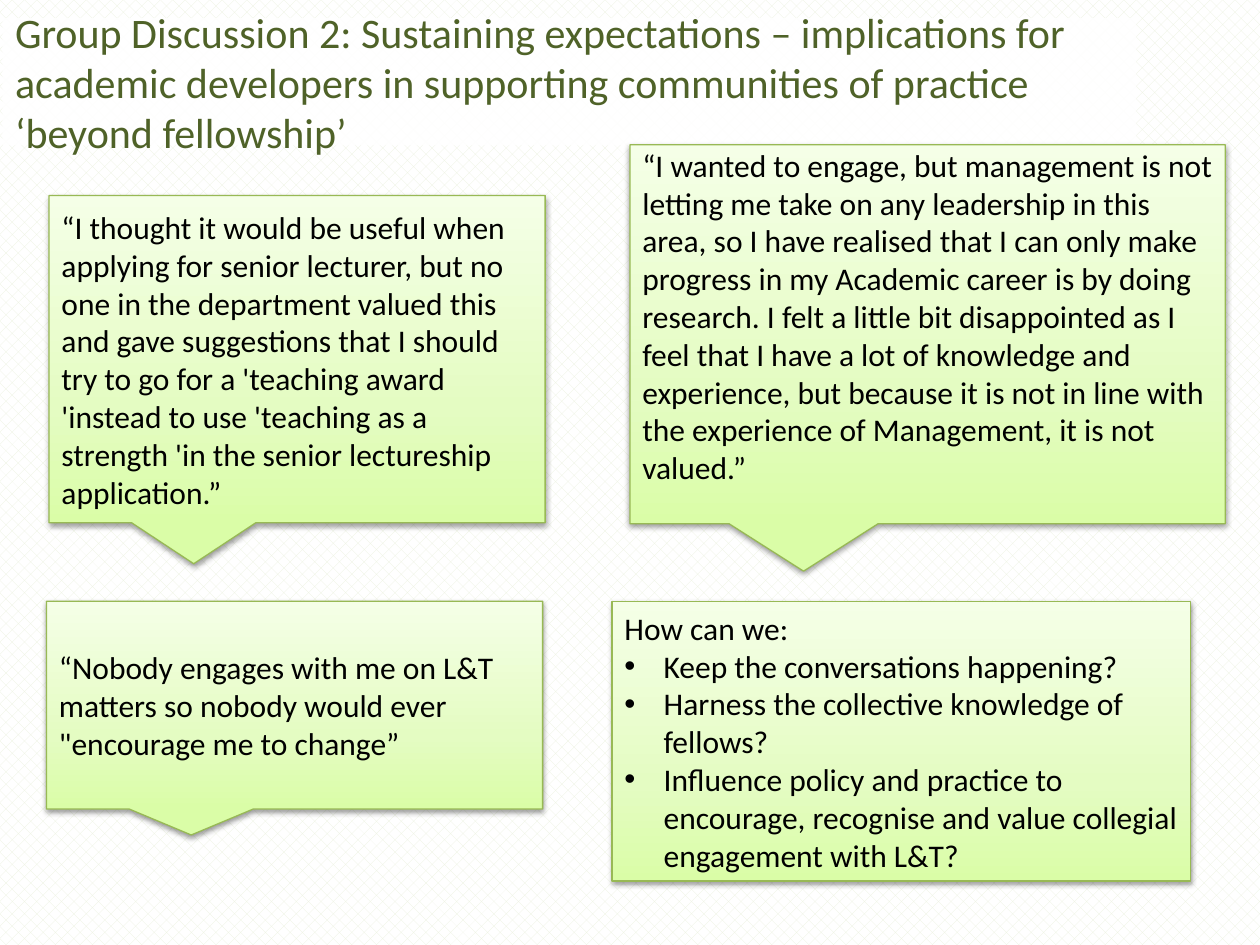
from lxml.etree import SubElement
from pptx import Presentation
from pptx.dml.color import RGBColor
from pptx.enum.dml import MSO_PATTERN
from pptx.enum.shapes import MSO_SHAPE
from pptx.enum.text import MSO_ANCHOR, MSO_AUTO_SIZE, PP_ALIGN
from pptx.oxml.ns import qn
from pptx.util import Cm, Pt

FONT = "Calibri"
STOPS = [(0, "DAFDA7"), (35, "E4FCC2"), (100, "F5FFE7")]
CALL = MSO_SHAPE.RECTANGULAR_CALLOUT

TITLE = ("Group Discussion 2: Sustaining expectations – implications for academic "
         "developers in supporting communities of practice ‘beyond fellowship’")
LECTURER = ("“I thought it would be useful when applying for senior lecturer, but no one "
            "in the department valued this and gave suggestions that I should try to go "
            "for a 'teaching award 'instead to use 'teaching as a strength 'in the senior "
            "lectureship application.”")
MANAGER = ("“I wanted to engage, but management is not letting me take on any leadership "
           "in this area, so I have realised that I can only make progress in my Academic "
           "career is by doing research. I felt a little bit disappointed as I feel that I "
           "have a lot of knowledge and experience, but because it is not in line with the "
           "experience of Management, it is not valued.”")
NOBODY = ("“Nobody engages with me on L&T matters so nobody would ever "
          "\"encourage me to change”")
ASK = "How can we:"
POINTS = ["Keep the conversations happening?",
          "Harness the collective knowledge of fellows?",
          "Influence policy and practice to encourage, recognise and value collegial "
          "engagement with L&T?"]


def rgb(code):
    return RGBColor.from_string(code)


def node(parent, tag, **attrs):
    return SubElement(parent, qn(tag), {key: str(val) for key, val in attrs.items()})


def place(shape, left, top, width, height):
    shape.left, shape.top = Cm(left), Cm(top)
    shape.width, shape.height = Cm(width), Cm(height)


def write(para, text, size, color):
    para.alignment = PP_ALIGN.LEFT
    run = para.add_run()
    run.text = text
    run.font.size = Pt(size)
    run.font.name = FONT
    run.font.color.rgb = rgb(color)


def bullet(para):
    props = para._p.get_or_add_pPr()
    props.set("marL", str(Cm(0.79)))
    props.set("indent", str(-Cm(0.79)))
    node(props, "a:buFont", typeface="Arial")
    node(props, "a:buChar", char="•")


def shade(shape):
    """Three-stop gradient, lightest at the top."""
    shape.fill.gradient()
    grad = shape._element.spPr.find(qn("a:gradFill"))
    stops = grad.find(qn("a:gsLst"))
    for old in list(stops):
        stops.remove(old)
    for pos, code in STOPS:
        stop = node(stops, "a:gs", pos=pos * 1000)
        node(stop, "a:srgbClr", val=code)
    grad.find(qn("a:lin")).set("ang", str(270 * 60000))


def shadow(shape):
    shape.shadow.inherit = False
    effects = shape._element.spPr.find(qn("a:effectLst"))
    outer = node(effects, "a:outerShdw", blurRad=Pt(3.1), dist=Pt(1.6),
                 dir=90 * 60000, rotWithShape=0)
    node(node(outer, "a:srgbClr", val="000000"), "a:alpha", val=38000)


def panel(slide, kind, box, text, anchor=MSO_ANCHOR.MIDDLE):
    shape = slide.shapes.add_shape(kind, *map(Cm, box))
    shade(shape)
    shape.line.color.rgb = rgb("98B955")
    shape.line.width = Pt(0.75)
    shadow(shape)
    frame = shape.text_frame
    frame.word_wrap = True
    frame.vertical_anchor = anchor
    write(frame.paragraphs[0], text, 18, "000000")
    return frame


def heading(slide):
    title = slide.shapes.title
    place(title, 0.05, 0.36, 22.86, 2.57)
    title.fill.solid()
    title.fill.fore_color.rgb = rgb("FFFFFF")
    color = title._element.spPr.find(qn("a:solidFill"))[0]
    node(color, "a:alpha", val=90000)
    frame = title.text_frame
    frame.word_wrap = True
    frame.auto_size = MSO_AUTO_SIZE.NONE
    frame.vertical_anchor = MSO_ANCHOR.MIDDLE
    write(frame.paragraphs[0], TITLE, 24, "4F6228")


def main():
    deck = Presentation()
    deck.slide_width, deck.slide_height = Cm(25.4), Cm(19.05)
    slide = deck.slides.add_slide(deck.slide_layouts[5])

    # Background pattern
    back = slide.background.fill
    back.patterned()
    back.pattern = MSO_PATTERN.PERCENT_30
    back.fore_color.rgb = rgb("EBF1DE")
    back.back_color.rgb = rgb("FFFFFF")

    heading(slide)

    # Quotes
    panel(slide, CALL, (0.99, 3.94, 10, 6.6), LECTURER)
    quote = panel(slide, CALL, (12.7, 2.92, 12, 7.64), MANAGER, MSO_ANCHOR.TOP)
    quote.margin_top = Cm(0.02)
    panel(slide, CALL, (0.94, 12.12, 10, 4.19), NOBODY)

    # Questions
    frame = panel(slide, MSO_SHAPE.RECTANGLE, (12.34, 12.12, 11.66, 5.64), ASK)
    for point in POINTS:
        para = frame.add_paragraph()
        write(para, point, 18, "000000")
        bullet(para)

    deck.save("out.pptx")


if __name__ == "__main__":
    main()
